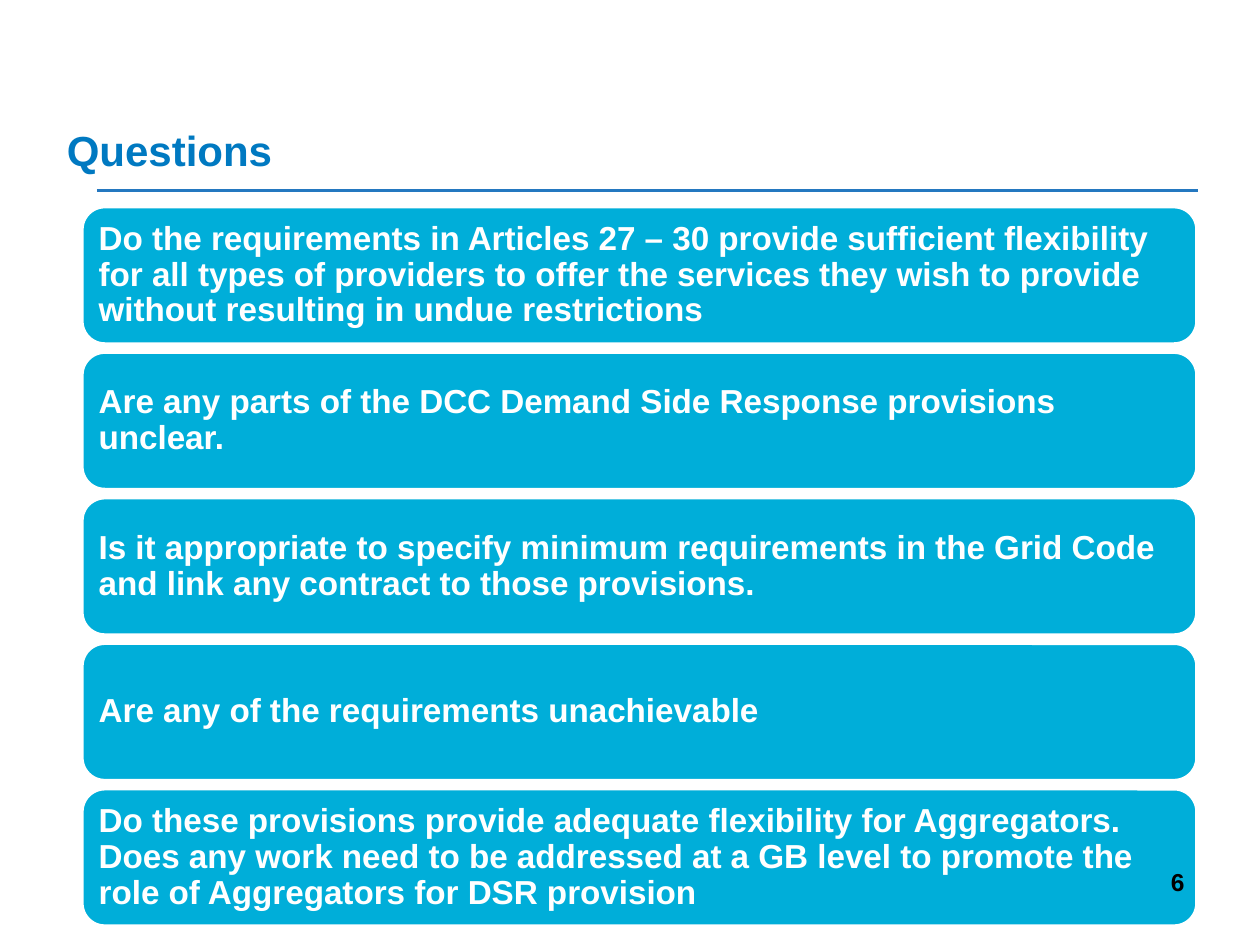
from lxml.etree import SubElement
from pptx import Presentation
from pptx.dml.color import RGBColor
from pptx.enum.shapes import MSO_CONNECTOR, MSO_SHAPE
from pptx.enum.text import MSO_ANCHOR, PP_ALIGN
from pptx.oxml.ns import qn
from pptx.util import Inches, Pt

TITLE = "Questions"
QUESTIONS = [
    "Do the requirements in Articles 27 – 30 provide sufficient flexibility for all types of "
    "providers to offer the services they wish to provide without resulting in undue restrictions",
    "Are any parts of the DCC Demand Side Response provisions unclear.",
    "Is it appropriate to specify minimum requirements in the Grid Code and link any contract "
    "to those provisions.",
    "Are any of the requirements unachievable",
    "Do these provisions provide adequate flexibility for Aggregators. Does any work need to be "
    "addressed at a GB level to promote the role of Aggregators for DSR provision",
]
PAGE_NUMBER = "6"
COLORS = {"title": "0079C1", "rule": "2478C0", "box": "00AED9", "white": "FFFFFF", "black": "000000"}

# Stack of question boxes, in inches
LEFT, WIDTH = 0.65, 8.85
TOP, BOTTOM, BOX_HEIGHT = 1.64, 7.35, 1.09
PITCH = (BOTTOM - TOP - BOX_HEIGHT) / (len(QUESTIONS) - 1)
INSET = 0.08


def color(name):
    return RGBColor.from_string(COLORS[name])


def write(shape, text, size, color_name, align, anchor):
    frame = shape.text_frame
    frame.word_wrap = True
    frame.vertical_anchor = anchor
    paragraph = frame.paragraphs[0]
    paragraph.alignment = align
    run = paragraph.add_run()
    run.text = text
    run.font.name = "Arial"
    run.font.size = Pt(size)
    run.font.bold = True
    run.font.color.rgb = color(color_name)
    return paragraph


def add_question(slide, index, text):
    box = slide.shapes.add_shape(
        MSO_SHAPE.ROUNDED_RECTANGLE,
        Inches(LEFT), Inches(TOP + index * PITCH), Inches(WIDTH), Inches(BOX_HEIGHT))
    box.shadow.inherit = False
    box.fill.solid()
    box.fill.fore_color.rgb = color("box")
    box.line.color.rgb = color("white")
    box.line.width = Pt(2)
    frame = box.text_frame
    frame.margin_left = frame.margin_right = Inches(INSET)
    frame.margin_top = frame.margin_bottom = Inches(INSET)
    paragraph = write(box, text, 19, "white", PP_ALIGN.LEFT, MSO_ANCHOR.MIDDLE)
    paragraph.line_spacing = 0.9


def main():
    presentation = Presentation()
    presentation.slide_width, presentation.slide_height = Inches(10), Inches(7.5)
    slide = presentation.slides.add_slide(presentation.slide_layouts[5])

    # Title and the rule below it
    title = slide.shapes.title
    title.left, title.top = Inches(0.43), Inches(0.94)
    title.width, title.height = Inches(8.85), Inches(0.5)
    write(title, TITLE, 24, "title", PP_ALIGN.LEFT, MSO_ANCHOR.BOTTOM)

    rule = slide.shapes.add_connector(
        MSO_CONNECTOR.STRAIGHT, Inches(0.77), Inches(1.51), Inches(9.51), Inches(1.51))
    rule.line.color.rgb = color("rule")
    rule.line.width = Pt(1.5)
    SubElement(rule.element.spPr, qn("a:effectLst"))

    # Question boxes
    for index, text in enumerate(QUESTIONS):
        add_question(slide, index, text)

    # Page number
    number = slide.shapes.add_textbox(Inches(7.17), Inches(6.83), Inches(2.33), Inches(0.52))
    write(number, PAGE_NUMBER, 14, "black", PP_ALIGN.RIGHT, MSO_ANCHOR.TOP)

    presentation.save("out.pptx")


if __name__ == "__main__":
    main()
